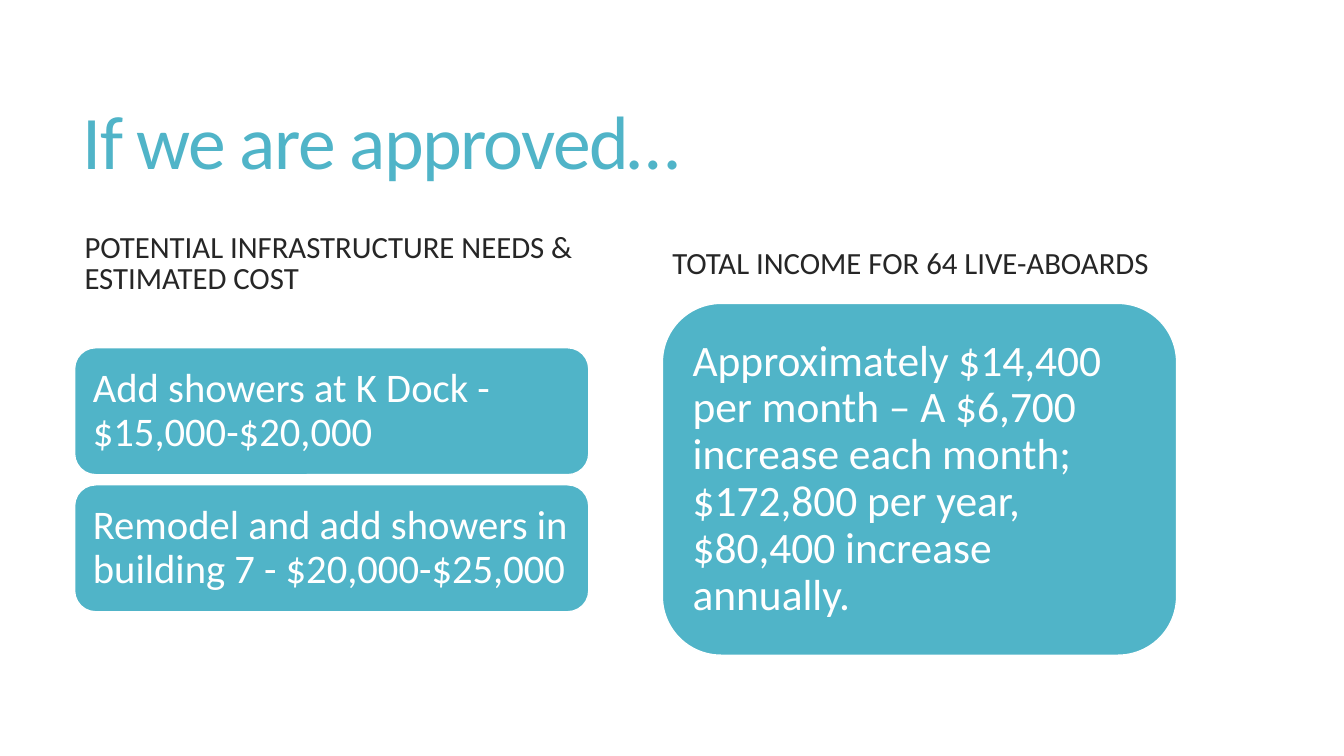
from pptx import Presentation
from pptx.dml.color import RGBColor
from pptx.enum.shapes import MSO_SHAPE
from pptx.enum.text import MSO_ANCHOR, MSO_AUTO_SIZE, PP_ALIGN
from pptx.util import Emu, Pt

PX = 9144  # 100 px to the inch
TEAL = RGBColor(0x50, 0xB4, 0xC8)
DARK = RGBColor(0x26, 0x26, 0x26)
WHITE = RGBColor(0xFF, 0xFF, 0xFF)

COLUMN_TOP, COLUMN_W, HEADING_H = 223, 510, 79


def px(*lengths):
    return [Emu(n * PX) for n in lengths]


def write(sp, text, size, color, line_spacing, inset=(10, 5), tracking=None):
    """Fill a shape with one left-aligned, vertically centred paragraph."""
    tf = sp.text_frame
    tf.word_wrap = True
    tf.auto_size = MSO_AUTO_SIZE.NONE
    tf.vertical_anchor = MSO_ANCHOR.MIDDLE
    tf.margin_left, tf.margin_top = tf.margin_right, tf.margin_bottom = px(*inset)
    p = tf.paragraphs[0]
    p.alignment = PP_ALIGN.LEFT
    p.line_spacing = line_spacing
    r = p.add_run()
    r.text = text
    r.font.name = "Calibri"
    r.font.size = Pt(size)
    r.font.color.rgb = color
    if tracking is not None:
        r.font._element.set("spc", str(tracking))


def add_title(s, box, text):
    title = s.shapes.title
    title.left, title.top, title.width, title.height = px(*box)
    write(title, text, 54, TEAL, 0.85, tracking=-120)


def add_card(s, box, text, size, inset):
    sp = s.shapes.add_shape(MSO_SHAPE.ROUNDED_RECTANGLE, *px(*box))
    sp.shadow.inherit = False
    sp.fill.solid()
    sp.fill.fore_color.rgb = TEAL
    sp.line.color.rgb = WHITE
    sp.line.width = Pt(1)
    write(sp, text, size, WHITE, 0.9, inset=(inset, inset))


def add_column(s, left, heading, cards, offset, card_h, size, inset, gap=10):
    """Heading with a stack of cards that starts offset px below it."""
    heading_box = s.shapes.add_textbox(*px(left, COLUMN_TOP, COLUMN_W, HEADING_H))
    write(heading_box, heading, 22, DARK, 0.85)
    top = COLUMN_TOP + HEADING_H + offset
    for i, text in enumerate(cards):
        box = (left, top + i * (card_h + gap), COLUMN_W, card_h)
        add_card(s, box, text, size, inset)


def main():
    prs = Presentation()
    prs.slide_width, prs.slide_height = px(1333, 750)
    s = prs.slides.add_slide(prs.slide_layouts[5])
    add_title(s, (72, 55, 1178, 181), "If we are approved…")
    add_column(
        s, 74, "POTENTIAL INFRASTRUCTURE NEEDS & ESTIMATED COST",
        ["Add showers at K Dock - $15,000-$20,000",
         "Remodel and add showers in building 7 - $20,000-$25,000"],
        offset=43, card_h=126, size=29, inset=12)
    add_column(
        s, 657, "TOTAL INCOME FOR 64 LIVE-ABOARDS",
        ["Approximately $14,400 per month – A $6,700 increase each month; "
         "$172,800 per year, $80,400 increase annually."],
        offset=-1, card_h=349, size=31, inset=13)
    prs.save("out.pptx")


if __name__ == "__main__":
    main()
